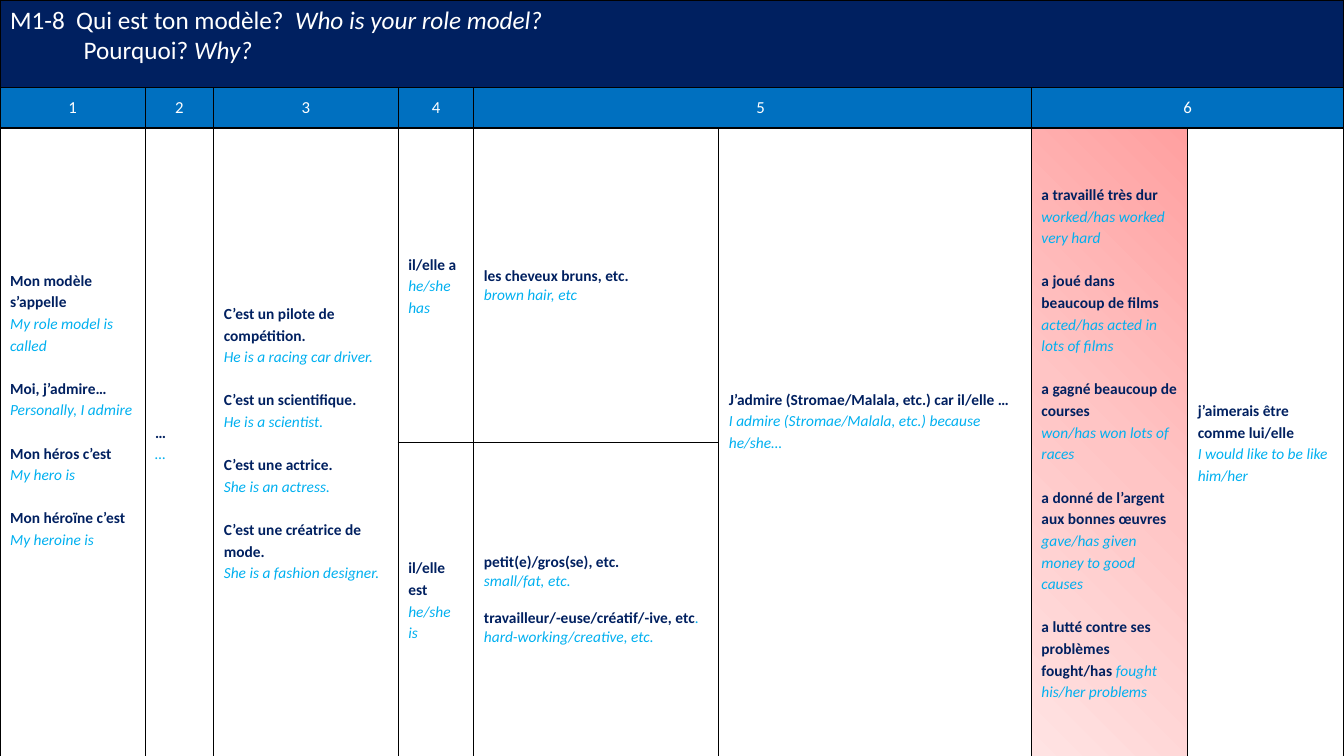
from dataclasses import dataclass

from lxml.etree import SubElement
from pptx import Presentation
from pptx.dml.color import RGBColor
from pptx.enum.text import MSO_ANCHOR as Anchor, PP_ALIGN as Align
from pptx.oxml.ns import qn
from pptx.util import Inches, Pt


@dataclass(frozen=True)
class Theme:
    font: str = "Calibri"
    navy: str = "002060"
    blue: str = "0070C0"
    cyan: str = "00B0F0"
    white: str = "FFFFFF"
    border: str = "000000"
    pinks: tuple = ((0, "FFA0A0"), (50, "FFC5C5"), (100, "FFE3E3"))
    title_size: int = 18
    number_size: int = 12
    body_size: int = 11
    line_spacing: float = 1.14


COLUMNS = (1.44, 0.68, 1.83, 0.75, 2.43, 3.1, 1.55, 1.55)
ROWS = (0.87, 0.4, 3.12, 3.12)
NUMBERS = ((0, 0), (1, 1), (2, 2), (3, 3), (4, 5), (6, 7))

NAMING = (
    ("Mon modèle s’appelle", "My role model is called"),
    ("Moi, j’admire…", "Personally, I admire"),
    ("Mon héros c’est", "My hero is"),
    ("Mon héroïne c’est", "My heroine is"),
)
JOBS = (
    ("C’est un pilote de compétition.", "He is a racing car driver."),
    ("C’est un scientifique.", "He is a scientist."),
    ("C’est une actrice.", "She is an actress."),
    ("C’est une créatrice de mode.", "She is a fashion designer."),
)
ADMIRATION = (
    ("J’admire (Stromae/Malala, etc.) car il/elle …",
     "I admire (Stromae/Malala, etc.) because he/she…"),
)
ACHIEVEMENTS = (
    ("a travaillé très dur", "worked/has worked very hard"),
    ("a joué dans beaucoup de films", "acted/has acted in lots of films"),
    ("a gagné beaucoup de courses", "won/has won lots of races"),
    ("a donné de l’argent aux bonnes œuvres", "gave/has given money to good causes"),
    ("a lutté contre ses problèmes fought/has ", "", "fought his/her problems"),
)
ASPIRATION = (("j’aimerais être comme lui/elle", "I would like to be like him/her"),)
LOOKS = (("les cheveux bruns, etc.", "brown hair, etc"),)
QUALITIES = (
    ("petit(e)/gros(se), etc.", "small/fat, etc."),
    ("travailleur/-euse/créatif/-ive, etc", "hard-working/creative, etc.", "."),
)


class PhraseTable:
    def __init__(self, slide, theme):
        self.slide = slide
        self.theme = theme
        frame = slide.shapes.add_table(
            len(ROWS), len(COLUMNS), 0, 0, Inches(sum(COLUMNS)), Inches(sum(ROWS)))
        self.table = frame.table
        self.table.first_row = False
        self.table.horz_banding = False
        for column, width in zip(self.table.columns, COLUMNS):
            column.width = Inches(width)
        for row, height in zip(self.table.rows, ROWS):
            row.height = Inches(height)
        for cell in self.table.iter_cells():
            cell.fill.background()
            self.add_borders(cell)

    def add_borders(self, cell):
        properties = cell._tc.get_or_add_tcPr()
        for index, side in enumerate(("lnL", "lnR", "lnT", "lnB")):
            line = SubElement(properties, qn(f"a:{side}"), w=str(Pt(1)))
            fill = SubElement(line, qn("a:solidFill"))
            SubElement(fill, qn("a:srgbClr"), val=self.theme.border)
            properties.insert(index, line)

    def merged(self, first, last):
        cell = self.table.cell(*first)
        if first != last:
            cell.merge(self.table.cell(*last))
        return cell

    def color(self, cell, value):
        cell.fill.solid()
        cell.fill.fore_color.rgb = RGBColor.from_string(value)

    def shade(self, cell):
        properties = cell._tc.get_or_add_tcPr()
        properties.remove(properties.find(qn("a:noFill")))
        gradient = SubElement(properties, qn("a:gradFill"), rotWithShape="1")
        stops = SubElement(gradient, qn("a:gsLst"))
        for position, value in self.theme.pinks:
            stop = SubElement(stops, qn("a:gs"), pos=str(position * 1000))
            SubElement(stop, qn("a:srgbClr"), val=value)
        SubElement(gradient, qn("a:lin"), ang=str(135 * 60000), scaled="0")

    def style(self, font, size, color, bold=False, italic=False):
        font.name = self.theme.font
        font.size = Pt(size)
        font.color.rgb = RGBColor.from_string(color)
        font.bold = bold
        font.italic = italic

    def add_title(self, lines):
        cell = self.merged((0, 0), (0, len(COLUMNS) - 1))
        self.color(cell, self.theme.navy)
        frame = cell.text_frame
        for index, (indent, *texts, english) in enumerate(lines):
            para = frame.add_paragraph() if index else frame.paragraphs[0]
            properties = para._p.get_or_add_pPr()
            properties.set("marL", str(Inches(indent)))
            properties.set("indent", "0")
            self.style(para.font, self.theme.title_size, self.theme.white)
            for text in texts:
                span = para.add_run()
                span.text = text
                if text == " ":
                    span._r.get_or_add_rPr().set("spc", "400")
            span = para.add_run()
            span.text = english
            span.font.italic = True

    def add_number(self, number, first, last):
        cell = self.merged((1, first), (1, last))
        self.color(cell, self.theme.blue)
        cell.vertical_anchor = Anchor.MIDDLE
        para = cell.text_frame.paragraphs[0]
        para.text = str(number)
        para.alignment = Align.CENTER
        self.style(para.font, self.theme.number_size, self.theme.white)
        return cell

    def add_phrases(self, first, last, phrases, spacing=None):
        spacing = spacing or self.theme.line_spacing
        size = self.theme.body_size
        cell = self.merged(first, last)
        cell.vertical_anchor = Anchor.MIDDLE
        frame = cell.text_frame
        for index, (french, english, *tail) in enumerate(phrases):
            para = frame.add_paragraph() if index else frame.paragraphs[0]
            para.line_spacing = spacing
            if index:
                para.space_before = Pt(round(size * 1.22 * spacing, 1))
            self.style(para.font, size, self.theme.navy, bold=True)
            para.add_run().text = french
            for text in tail:
                span = para.add_run()
                span.text = text
                self.style(span.font, size, self.theme.cyan, italic=True)
            if english:
                para = frame.add_paragraph()
                para.text = english
                para.line_spacing = spacing
                self.style(para.font, size, self.theme.cyan, italic=True)
        return cell


def main():
    deck = Presentation()
    deck.slide_width = Inches(13.33)
    deck.slide_height = Inches(7.5)
    page = PhraseTable(deck.slides.add_slide(deck.slide_layouts[6]), Theme())

    page.add_title((
        (0, "M1-8", " ", "Qui est ton modèle?", " ", "Who is your role model?"),
        (0.73, "Pourquoi? ", "Why?"),
    ))
    number_cells = [page.add_number(number, first, last)
                    for number, (first, last) in enumerate(NUMBERS, 1)]
    number_cells[4].margin_left = Inches(0.26)

    page.add_phrases((2, 0), (3, 0), NAMING).margin_bottom = Inches(0.71)
    page.add_phrases((2, 1), (3, 1), (("…", "…"),))
    page.add_phrases((2, 2), (3, 2), JOBS)
    page.add_phrases((2, 3), (2, 3), (("il/elle a", "he/she has"),))
    page.add_phrases((3, 3), (3, 3), (("il/elle est", "he/she is"),))
    page.add_phrases((2, 4), (2, 4), LOOKS, 1.0)
    page.add_phrases((3, 4), (3, 4), QUALITIES, 1.0)
    page.add_phrases((2, 5), (3, 5), ADMIRATION).margin_bottom = Inches(0.49)
    page.shade(page.add_phrases((2, 6), (3, 6), ACHIEVEMENTS))
    page.add_phrases((2, 7), (3, 7), ASPIRATION)
    deck.save("out.pptx")


if __name__ == "__main__":
    main()
